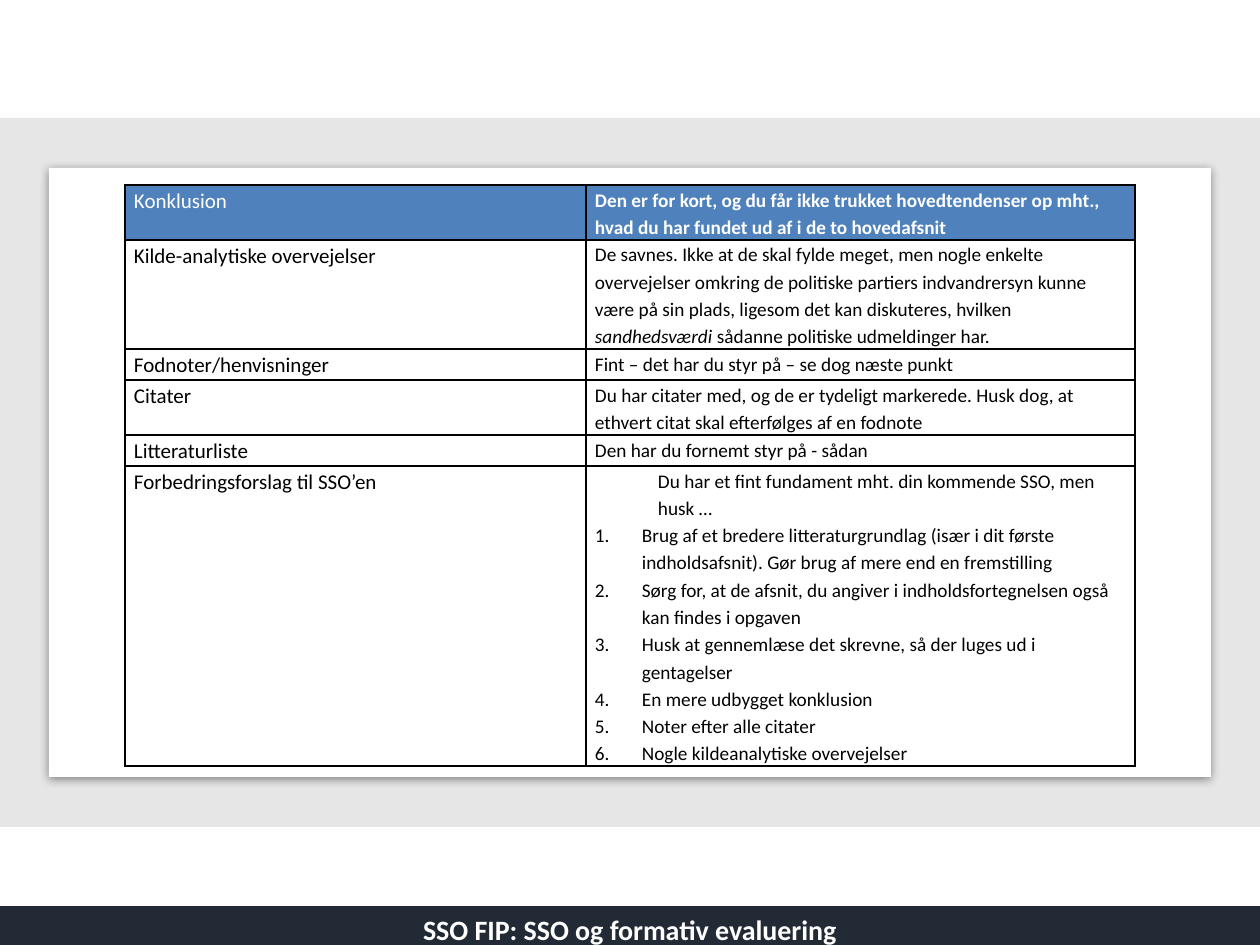
"""Builds a feedback table slide for a written assignment."""
from lxml.etree import SubElement
from pptx import Presentation
from pptx.dml.color import RGBColor
from pptx.enum.shapes import MSO_SHAPE as SHAPE
from pptx.enum.text import MSO_ANCHOR as ANCHOR, PP_ALIGN as ALIGN
from pptx.oxml.ns import qn
from pptx.util import Pt

PX = 914400 // 126
BLACK, WHITE, BLUE, NAVY, GREY = "000000", "FFFFFF", "4F81BD", "222A35", "E7E6E6"
COLUMNS = (461, 549)
ROW_HEIGHTS = (55, 108, 31, 55, 31, 298)
ADVICE = (
    "Du har et fint fundament mht. din kommende SSO, men husk …",
    "Brug af et bredere litteraturgrundlag (især i dit første indholdsafsnit). "
    "Gør brug af mere end en fremstilling",
    "Sørg for, at de afsnit, du angiver i indholdsfortegnelsen også kan findes i opgaven",
    "Husk at gennemlæse det skrevne, så der luges ud i gentagelser",
    "En mere udbygget konklusion",
    "Noter efter alle citater",
    "Nogle kildeanalytiske overvejelser",
)
ROWS = (
    ("Konklusion",
     "Den er for kort, og du får ikke trukket hovedtendenser op mht., "
     "hvad du har fundet ud af i de to hovedafsnit"),
    ("Kilde-analytiske overvejelser",
     "De savnes. Ikke at de skal fylde meget, men nogle enkelte overvejelser omkring "
     "de politiske partiers indvandrersyn kunne være på sin plads, ligesom det kan "
     "diskuteres, hvilken *sandhedsværdi* sådanne politiske udmeldinger har."),
    ("Fodnoter/henvisninger", "Fint – det har du styr på – se dog næste punkt"),
    ("Citater",
     "Du har citater med, og de er tydeligt markerede. Husk dog, at ethvert citat "
     "skal efterfølges af en fodnote"),
    ("Litteraturliste", "Den har du fornemt styr på - sådan"),
    ("Forbedringsforslag til SSO’en", "\n".join(ADVICE)),
)


def px(*lengths):
    """Turn pixel lengths into EMU."""
    return [n * PX for n in lengths]


def paint(target, color):
    """Give a fill a solid colour."""
    target.solid()
    target.fore_color.rgb = RGBColor.from_string(color)


def style_run(r, size, color, bold=False, italic=False):
    """Format one run."""
    r.font.name = "Calibri"
    r.font.size = Pt(size)
    r.font.bold = bold
    r.font.italic = italic
    paint(r.font.fill, color)


def add_box(slide, box, color):
    """Add a plain filled rectangle."""
    sp = slide.shapes.add_shape(SHAPE.RECTANGLE, *px(*box))
    sp.shadow.inherit = False
    paint(sp.fill, color)
    sp.line.fill.background()
    return sp


def add_shadow(sp):
    """Put a soft downward shadow on a shape."""
    effects = sp._element.spPr.find(qn("a:effectLst"))
    shadow = SubElement(effects, qn("a:outerShdw"), blurRad=str(Pt(5)),
                        dist=str(Pt(1.4)), dir="5400000", rotWithShape="0")
    color = SubElement(shadow, qn("a:srgbClr"), val=BLACK)
    SubElement(color, qn("a:alpha"), val="43000")


def add_borders(cell):
    """Draw a thin black line on all four sides of a cell."""
    tcPr = cell._tc.get_or_add_tcPr()
    for side in "LRTB":
        line = SubElement(tcPr, qn(f"a:ln{side}"), w=str(Pt(1)))
        fill = SubElement(line, qn("a:solidFill"))
        SubElement(fill, qn("a:srgbClr"), val=BLACK)


def indent(p, left, hanging=0):
    """Indent a paragraph, numbering it when the indent hangs."""
    pPr = p._p.get_or_add_pPr()
    pPr.set("marL", str(left * PX))
    pPr.set("indent", str(-hanging * PX))
    if hanging:
        SubElement(pPr, qn("a:buFont"), typeface="+mj-lt")
        SubElement(pPr, qn("a:buAutoNum"), type="arabicPeriod")


def fill_cell(cell, text, size, header, bold):
    """Write and format one cell; asterisks enclose italics."""
    cell.margin_left, cell.margin_right = px(9, 9)
    cell.margin_top = cell.margin_bottom = 0
    add_borders(cell)
    if header:
        paint(cell.fill, BLUE)
    else:
        cell.fill.background()
    tf = cell.text_frame
    tf.text = text
    numbered = len(tf.paragraphs) > 1
    for i, p in enumerate(tf.paragraphs):
        parts = p.text.split("*")
        p.text = parts[0]
        for part in parts[1:]:
            p.add_run().text = part
        p.line_spacing = 1.15
        for j, r in enumerate(p.runs):
            style_run(r, size, WHITE if header else BLACK, bold, j % 2 == 1)
        if numbered:
            indent(p, *((47, 47) if i else (63, 0)))


def add_feedback_table(slide):
    """Add the table of assignment parts and comments."""
    box = px(125, 185, sum(COLUMNS), sum(ROW_HEIGHTS))
    table = slide.shapes.add_table(len(ROWS), len(COLUMNS), *box).table
    table.first_row = table.horz_banding = False
    for column, width in zip(table.columns, px(*COLUMNS)):
        column.width = width
    for row, height in zip(table.rows, px(*ROW_HEIGHTS)):
        row.height = height
    for i, (topic, comment) in enumerate(ROWS):
        fill_cell(table.cell(i, 0), topic, 12, i == 0, False)
        fill_cell(table.cell(i, 1), comment, 11, i == 0, i == 0)


def add_footer(slide, text):
    """Add the dark bar with the event name."""
    sp = add_box(slide, (0, 907, 1260, 45), NAVY)
    paint(sp.line.fill, NAVY)
    sp.line.width = Pt(1)
    tf = sp.text_frame
    tf.text = text
    tf.vertical_anchor = ANCHOR.MIDDLE
    p = tf.paragraphs[0]
    p.alignment = ALIGN.CENTER
    style_run(p.runs[0], 16, WHITE, bold=True)


def main():
    """Build and save the slide."""
    prs = Presentation()
    prs.slide_width, prs.slide_height = px(1260, 945)
    slide = prs.slides.add_slide(prs.slide_layouts[6])
    paint(slide.background.fill, WHITE)
    add_box(slide, (0, 118, 1260, 709), GREY)
    add_shadow(add_box(slide, (49, 168, 1162, 609), WHITE))
    add_feedback_table(slide)
    add_footer(slide, "SSO FIP: SSO og formativ evaluering")
    prs.save("out.pptx")


if __name__ == "__main__":
    main()
